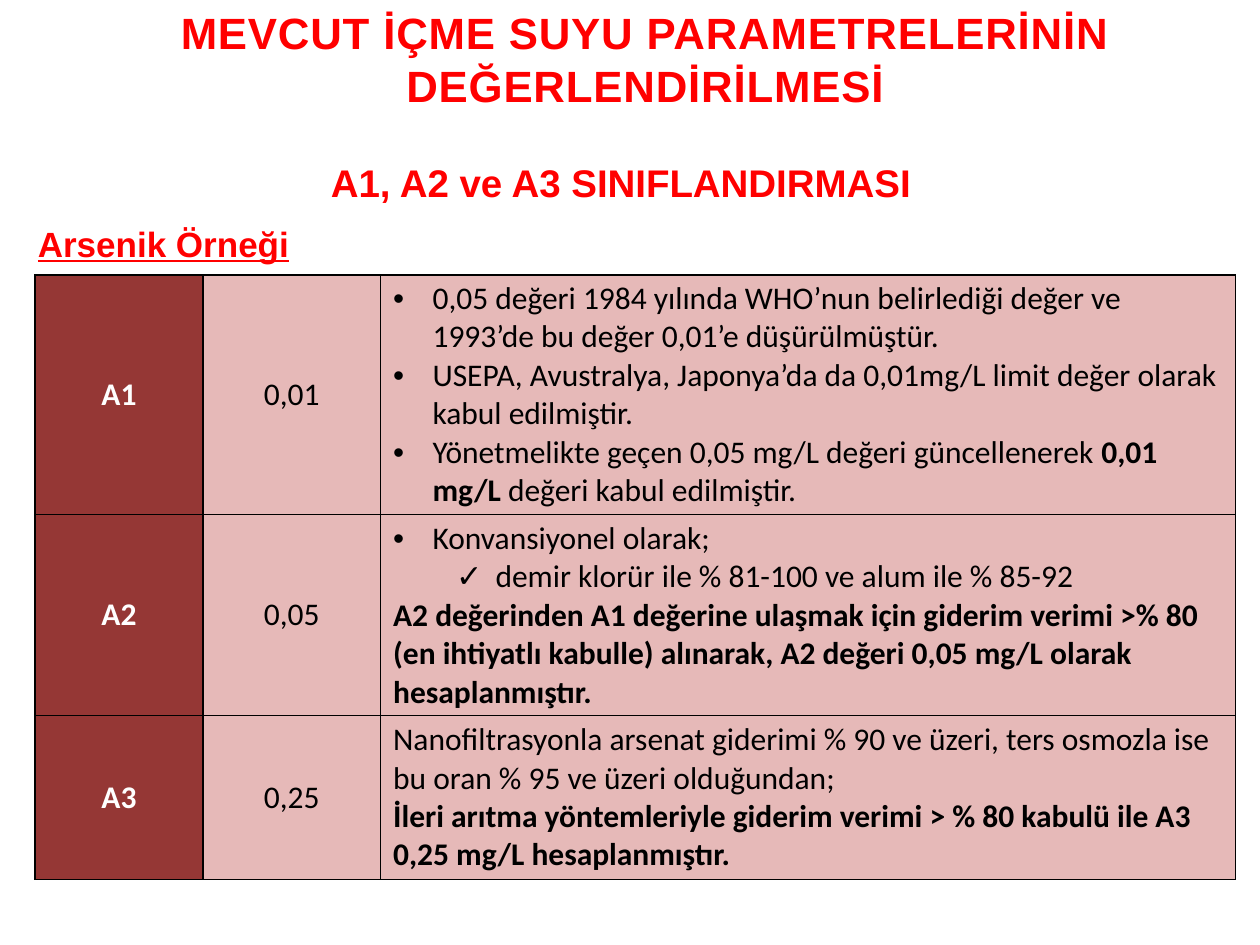
from dataclasses import dataclass

from pptx import Presentation
from pptx.dml.color import RGBColor
from pptx.enum import text
from pptx.oxml import xmlchemy
from pptx.oxml.ns import qn
from pptx.util import Pt
from lxml import etree

ALIGN = text.PP_ALIGN


@dataclass(frozen=True)
class Theme:
    heading_font: str = "Arial"
    body_font: str = "Calibri"
    red: str = "FF0000"
    label_fill: str = "953735"
    cell_fill: str = "E6B9B8"
    white: str = "FFFFFF"
    black: str = "000000"
    title: int = 25
    subtitle: int = 22
    example: int = 20
    body: int = 18


T = Theme()
HEADING = dict(font=T.heading_font, color=T.red, bold=True)
COLUMNS = [96, 101.5, 488.5]
ROWS = [
    ("A1", "0,01", 137, [
        ("•", 22.5, ["0,05 değeri 1984 yılında WHO’nun belirlediği değer ve "
                     "1993’de bu değer 0,01’e düşürülmüştür."]),
        ("•", 22.5, ["USEPA, Avustralya, Japonya’da da 0,01mg/L limit değer "
                     "olarak kabul edilmiştir."]),
        ("•", 22.5, ["Yönetmelikte geçen 0,05 mg/L değeri güncellenerek ",
                     ("0,01 mg/L ",), "değeri kabul edilmiştir."]),
    ]),
    ("A2", "0,05", 115, [
        ("•", 22.5, ["Konvansiyonel olarak;"]),
        ("✓", 58.5, ["demir klorür ile % 81-100 ve alum ile % 85-92"]),
        (None, 0, [("A2 değerinden A1 değerine ulaşmak için giderim verimi >% 80 "
                    "(en ihtiyatlı kabulle) alınarak, A2 değeri 0,05 mg/L olarak "
                    "hesaplanmıştır.",)]),
    ]),
    ("A3", "0,25", 93.5, [
        (None, 0, ["Nanofiltrasyonla arsenat giderimi % 90 ve üzeri, ters osmozla "
                   "ise bu oran % 95 ve üzeri olduğundan;"]),
        (None, 0, [("İleri arıtma yöntemleriyle giderim verimi > % 80 kabulü ile "
                    "A3 0,25 mg/L hesaplanmıştır.",)]),
    ]),
]


def add_run(p, content, font=T.body_font, size=T.body, color=T.black,
            bold=False, underline=None, spacing=None):
    r = p.add_run()
    r.text = content
    f = r.font
    f.name, f.size, f.bold, f.underline = font, Pt(size), bold, underline
    f.color.rgb = RGBColor.from_string(color)
    if spacing:
        r._r.get_or_add_rPr().set("spc", str(int(spacing * 100)))


def next_paragraph(tf, align=ALIGN.LEFT):
    """Use the frame's empty first paragraph before adding new ones."""
    p = tf.paragraphs[-1] if not tf.paragraphs[-1].runs else tf.add_paragraph()
    p.alignment = align
    return p


def add_textbox(slide, left, top, width, height):
    tf = slide.shapes.add_textbox(Pt(left), Pt(top), Pt(width), Pt(height)).text_frame
    tf.word_wrap = True
    return tf


def set_bullet(p, char, indent):
    pPr = p._p.get_or_add_pPr()
    pPr.set("marL", str(Pt(indent)))
    pPr.set("indent", str(-Pt(22.5)))
    etree.SubElement(pPr, qn("a:buFont")).set("typeface", T.heading_font)
    etree.SubElement(pPr, qn("a:buChar")).set("char", char)


def style_cell(cell, fill):
    tcPr = cell._tc.get_or_add_tcPr()
    for side in ("lnL", "lnR", "lnT", "lnB"):
        ln = etree.SubElement(tcPr, qn(f"a:{side}"), w=str(Pt(1)))
        solid = etree.SubElement(ln, qn("a:solidFill"))
        etree.SubElement(solid, qn("a:srgbClr"), val=T.black)
    cell.fill.solid()
    cell.fill.fore_color.rgb = RGBColor.from_string(fill)
    cell.vertical_anchor = text.MSO_ANCHOR.MIDDLE
    cell.margin_top = cell.margin_bottom = Pt(2.7)


def fill_notes(tf, notes):
    """Write the explanation column; runs given as tuples are bold."""
    for bullet, indent, runs in notes:
        p = next_paragraph(tf)
        if bullet:
            set_bullet(p, bullet, indent)
        for run in runs:
            bold = isinstance(run, tuple)
            add_run(p, run[0] if bold else run, bold=bold)


def add_class_table(slide, left, top):
    heights = [row[2] for row in ROWS]
    table = slide.shapes.add_table(len(ROWS), len(COLUMNS), Pt(left), Pt(top),
                                   Pt(sum(COLUMNS)), Pt(sum(heights))).table
    table.first_row = table.horz_banding = False
    for column, width in zip(table.columns, COLUMNS):
        column.width = Pt(width)
    for row, (label, limit, height, notes) in zip(table.rows, ROWS):
        row.height = Pt(height)
        for cell, fill in zip(row.cells, (T.label_fill, T.cell_fill, T.cell_fill)):
            style_cell(cell, fill)
        name, value, detail = (cell.text_frame for cell in row.cells)
        add_run(next_paragraph(name, ALIGN.CENTER), label, color=T.white, bold=True)
        add_run(next_paragraph(value, ALIGN.CENTER), limit)
        fill_notes(detail, notes)


def main():
    prs = Presentation()
    prs.slide_width, prs.slide_height = Pt(720), Pt(540)
    slide = prs.slides.add_slide(prs.slide_layouts[6])

    title = add_textbox(slide, 88, 0, 561.5, 67.5)
    add_run(next_paragraph(title, ALIGN.CENTER),
            "MEVCUT İÇME SUYU PARAMETRELERİNİN DEĞERLENDİRİLMESİ",
            size=T.title, spacing=0.5, **HEADING)

    headings = add_textbox(slide, 14.5, 77, 680.5, 112.5)
    for content, align, size, underline in (
            ("A1, A2 ve A3 SINIFLANDIRMASI", ALIGN.CENTER, T.subtitle, None),
            ("Arsenik Örneği", ALIGN.JUSTIFY, T.example, True)):
        p = next_paragraph(headings, align)
        p.line_spacing = 1.4
        add_run(p, content, size=size, underline=underline, **HEADING)

    add_class_table(slide, 20, 157)
    prs.save("out.pptx")


if __name__ == "__main__":
    main()
